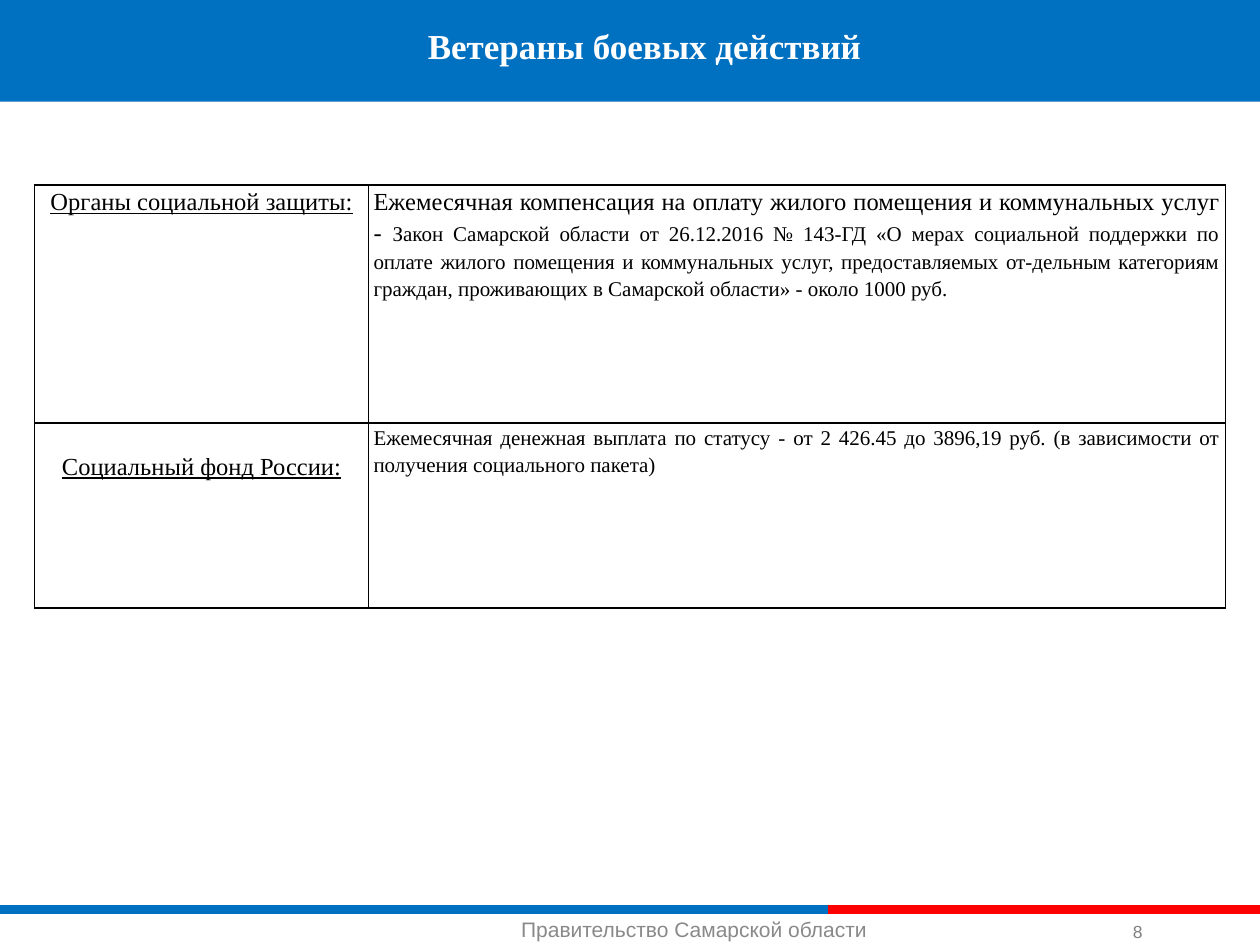
from lxml.etree import SubElement
from pptx import Presentation
from pptx.dml.color import RGBColor
from pptx.enum.shapes import MSO_CONNECTOR, MSO_SHAPE
from pptx.enum.text import MSO_ANCHOR, PP_ALIGN
from pptx.oxml.ns import qn
from pptx.util import Cm, Pt

BLUE = RGBColor(0x00, 0x70, 0xC1)
RED = RGBColor(0xFF, 0x00, 0x00)
WHITE = RGBColor(0xFF, 0xFF, 0xFF)
BLACK = RGBColor(0x00, 0x00, 0x00)
FOOTER_GRAY = RGBColor(0x89, 0x89, 0x89)
NUMBER_GRAY = RGBColor(0x80, 0x80, 0x80)
SERIF = "Times New Roman"
SANS = "Arial"

SLIDE_WIDTH, SLIDE_HEIGHT = 25.4, 19.05
HEADING = {"name": SERIF, "size": Pt(14), "underline": True}
LEAD = {"name": SERIF, "size": Pt(14)}
DETAIL = {"name": SERIF, "size": Pt(12)}
BENEFITS = [
    {
        "height": 4.8,
        "source_top": 0,
        "source": "Органы социальной защиты:",
        "benefit": [
            ("Ежемесячная компенсация на оплату жилого помещения и коммунальных услуг - ", LEAD),
            ("Закон Самарской области от 26.12.2016 № 143-ГД «О мерах социальной "
             "поддержки по оплате жилого помещения и коммунальных услуг, "
             "предоставляемых от-дельным категориям граждан, проживающих в "
             "Самарской области» - около 1000 руб.", DETAIL),
        ],
    },
    {
        "height": 3.73,
        "source_top": 0.53,
        "source": "Социальный фонд России:",
        "benefit": [
            ("Ежемесячная денежная выплата по статусу - от 2 426.45 до 3896,19 руб. "
             "(в зависимости от получения социального пакета)", DETAIL),
        ],
    },
]


def apply_format(target, values):
    """Set every attribute named in a dict of format values."""
    for attribute, value in values.items():
        setattr(target, attribute, value)


def add_run(paragraph, text, color, font_values):
    """Append a formatted run to a paragraph."""
    run = paragraph.add_run()
    run.text = text
    apply_format(run.font, font_values)
    run.font.color.rgb = color


def fill_frame(frame, text, color, font_values, frame_values, alignment):
    """Write one formatted paragraph into a text frame with even insets."""
    insets = dict.fromkeys(
        ("margin_left", "margin_top", "margin_right", "margin_bottom"), Cm(0.13))
    apply_format(frame, {**insets, **frame_values})
    paragraph = frame.paragraphs[0]
    paragraph.alignment = alignment
    add_run(paragraph, text, color, font_values)


def add_header(slide, left, top, width, height):
    """Draw the blue band with the slide title on it."""
    band = slide.shapes.add_shape(
        MSO_SHAPE.RECTANGLE, Cm(left), Cm(top), Cm(width), Cm(height))
    band.shadow.inherit = False
    band.fill.solid()
    band.fill.fore_color.rgb = BLUE
    band.line.fill.background()
    title = slide.shapes.title
    title.element.addprevious(band.element)
    apply_format(title, {"left": Cm(left + 2.9), "top": Cm(top - 0.03),
                         "width": Cm(20.19), "height": Cm(2.06)})
    fill_frame(title.text_frame, "Ветераны боевых действий", WHITE,
               {"name": SERIF, "size": Pt(20), "bold": True},
               {"vertical_anchor": MSO_ANCHOR.MIDDLE, "word_wrap": True},
               PP_ALIGN.CENTER)


def format_cell(cell, top_margin, alignment):
    """Give a cell black borders, no fill and its paragraph layout."""
    properties = cell._tc.get_or_add_tcPr()
    for side in ("lnL", "lnR", "lnT", "lnB"):
        border = SubElement(properties, qn(f"a:{side}"), w=str(Pt(1)))
        solid = SubElement(border, qn("a:solidFill"))
        SubElement(solid, qn("a:srgbClr"), val=str(BLACK))
    cell.fill.background()
    apply_format(cell, {"margin_left": Cm(0.1), "margin_right": Cm(0.1),
                        "margin_top": Cm(top_margin), "margin_bottom": 0,
                        "vertical_anchor": MSO_ANCHOR.TOP})
    paragraph = cell.text_frame.paragraphs[0]
    apply_format(paragraph, {"alignment": alignment, "line_spacing": 1.15})
    return paragraph


def add_benefits(slide, left, top, width):
    """Build the table of paying bodies and their benefits."""
    height = sum(row["height"] for row in BENEFITS)
    table = slide.shapes.add_table(
        len(BENEFITS), 2, Cm(left), Cm(top), Cm(width), Cm(height)).table
    apply_format(table, {"first_row": False, "horz_banding": False})
    source_width = 6.73
    for column, column_width in zip(table.columns, (source_width, width - source_width)):
        column.width = Cm(column_width)
    for index, row in enumerate(BENEFITS):
        table.rows[index].height = Cm(row["height"])
        source = format_cell(table.cell(index, 0), row["source_top"], PP_ALIGN.CENTER)
        add_run(source, row["source"], BLACK, HEADING)
        benefit = format_cell(table.cell(index, 1), 0, PP_ALIGN.JUSTIFY)
        for text, font_values in row["benefit"]:
            add_run(benefit, text, BLACK, font_values)


def add_footer(slide, left, top, width):
    """Draw the two-colour rule, the issuer and the slide number."""
    split = left + 16.69
    for start, end, color in ((left, split, BLUE), (split, left + width, RED)):
        rule = slide.shapes.add_connector(
            MSO_CONNECTOR.STRAIGHT, Cm(start), Cm(top), Cm(end), Cm(top))
        rule.line.color.rgb = color
        rule.line.width = Pt(5)
        SubElement(rule.element.spPr, qn("a:effectLst"))
    issuer = slide.shapes.add_textbox(Cm(left + 5.69), Cm(top), Cm(16.61), Cm(0.74))
    fill_frame(issuer.text_frame, "Правительство Самарской области", FOOTER_GRAY,
               {"name": SANS, "size": Pt(12)}, {"word_wrap": True}, PP_ALIGN.CENTER)
    number = slide.shapes.add_textbox(Cm(left + 22.71), Cm(top + 0.1), Cm(0.69), Cm(0.69))
    fill_frame(number.text_frame, "8", NUMBER_GRAY, {"name": SANS, "size": Pt(10)},
               {"vertical_anchor": MSO_ANCHOR.BOTTOM, "word_wrap": False}, PP_ALIGN.LEFT)


def main():
    """Build the slide and save it."""
    presentation = Presentation()
    apply_format(presentation, {"slide_width": Cm(SLIDE_WIDTH),
                                "slide_height": Cm(SLIDE_HEIGHT)})
    slide = presentation.slides.add_slide(presentation.slide_layouts[5])
    add_header(slide, 0, -0.08, SLIDE_WIDTH, 2.13)
    add_benefits(slide, 0.7, 3.73, 24)
    add_footer(slide, 0, 18.34, SLIDE_WIDTH)
    presentation.save("out.pptx")


if __name__ == "__main__":
    main()
